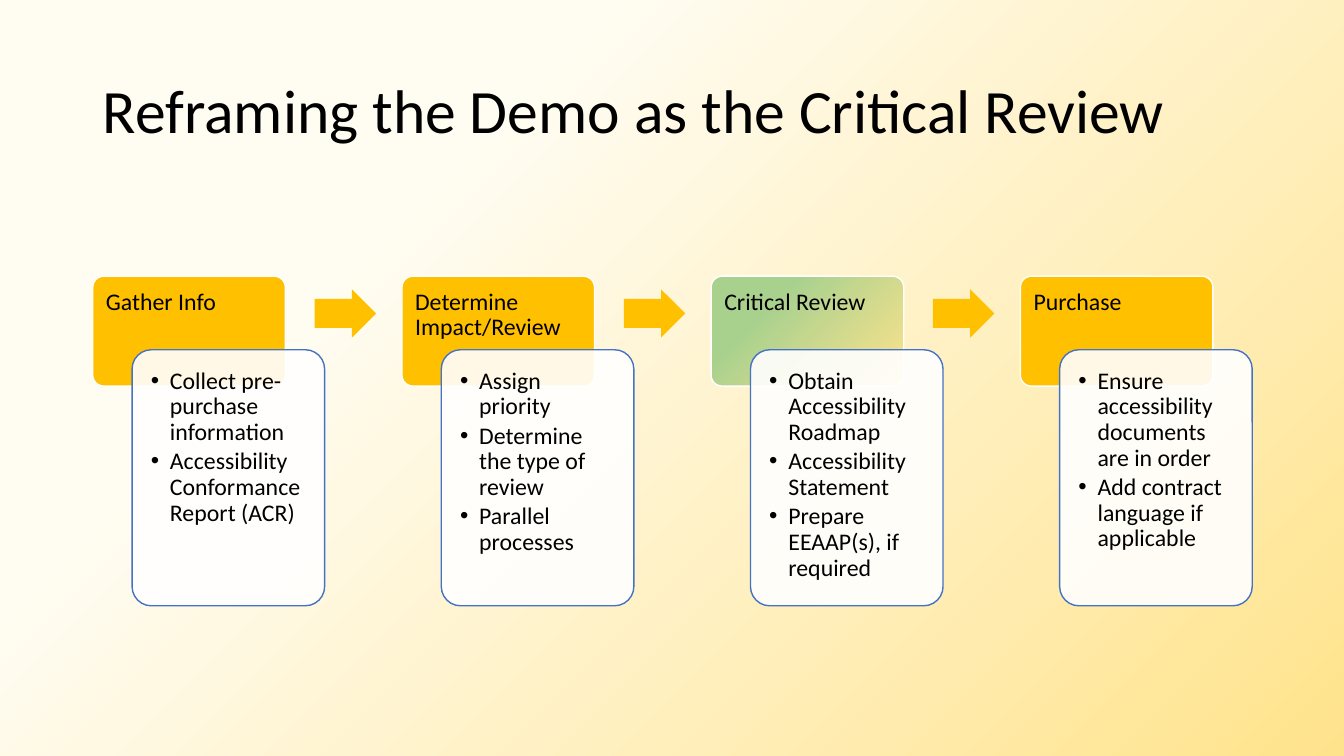
from lxml.etree import SubElement
from pptx import Presentation
from pptx.dml.color import RGBColor
from pptx.enum.shapes import MSO_SHAPE
from pptx.enum.text import MSO_ANCHOR, PP_ALIGN
from pptx.oxml.ns import qn
from pptx.util import Inches, Pt

BLACK = RGBColor(0x00, 0x00, 0x00)
WHITE = RGBColor(0xFF, 0xFF, 0xFF)
GOLD = RGBColor(0xFF, 0xC0, 0x00)
BLUE = RGBColor(0x44, 0x72, 0xC4)
GREEN = RGBColor(0xA9, 0xD1, 0x8E)
CREAM = RGBColor(0xFF, 0xFC, 0xF2)
SAND = RGBColor(0xFF, 0xE3, 0x8C)

TITLE = "Reframing the Demo as the Critical Review"
STEPS = [
    ("Gather Info", GOLD,
     ["Collect pre-purchase information",
      "Accessibility Conformance Report (ACR)"]),
    ("Determine Impact/Review", GOLD,
     ["Assign priority", "Determine the type of review", "Parallel processes"]),
    ("Critical Review", GREEN,
     ["Obtain Accessibility Roadmap", "Accessibility Statement",
      "Prepare EEAAP(s), if required"]),
    ("Purchase", GOLD,
     ["Ensure accessibility documents are in order",
      "Add contract language if applicable"]),
]
LEFT = 0.92
PITCH = 9.2 / 3


def apply(target, formats):
    for name, value in formats.items():
        setattr(target, name, value)


class ProcessSlide:
    """Holds the text style and current slide, and draws the process elements."""

    FONT = {"name": "Calibri", "size": Pt(17)}
    FRAME = {"word_wrap": True, "vertical_anchor": MSO_ANCHOR.TOP}
    PARAGRAPH = {"alignment": PP_ALIGN.LEFT, "line_spacing": 0.9}

    def __init__(self, prs):
        self.s = prs.slides.add_slide(prs.slide_layouts[5])
        self.gradient(self.s.background.fill, CREAM)
        self.group = None

    def gradient(self, fill, start):
        fill.gradient()
        fill.gradient_angle = 315
        for stop, color, position in zip(fill.gradient_stops, (start, SAND), (0.29, 1)):
            stop.color.rgb = color
            stop.position = position

    def text(self, p, content, **font):
        apply(p, self.PARAGRAPH)
        r = p.add_run()
        r.text = content
        apply(r.font, {**self.FONT, **font})
        r.font.color.rgb = BLACK

    def title(self, content):
        sp = self.s.shapes.title
        apply(sp, {"left": Inches(0.92), "top": Inches(0.4),
                   "width": Inches(11.5), "height": Inches(1.45)})
        sp.text_frame.vertical_anchor = MSO_ANCHOR.MIDDLE
        self.text(sp.text_frame.paragraphs[0], content, size=Pt(44))

    def start_process(self):
        self.group = self.s.shapes.add_group_shape()

    def shape(self, kind, box, fill, line, adjustments):
        sp = self.group.shapes.add_shape(kind, *map(Inches, box))
        sp.shadow.inherit = False
        for i, value in enumerate(adjustments):
            sp.adjustments[i] = value
        if fill == GREEN:
            self.gradient(sp.fill, fill)
        else:
            sp.fill.solid()
            sp.fill.fore_color.rgb = fill
        if line is None:
            sp.line.fill.background()
        else:
            sp.line.color.rgb = line
            sp.line.width = Pt(1)
        return sp

    def box(self, box, fill, line, margin):
        sp = self.shape(MSO_SHAPE.ROUNDED_RECTANGLE, box, fill, line, [0.1])
        sides = ("left", "top", "right", "bottom")
        margins = {f"margin_{side}": Inches(margin) for side in sides}
        apply(sp.text_frame, {**self.FRAME, **margins})
        return sp

    def header(self, x, content, fill):
        sp = self.box((x, 2.74, 1.91, 1.09), fill, WHITE, 0.1)
        p = sp.text_frame.paragraphs[0]
        self.text(p, content)
        p.space_after = Pt(6)

    def card(self, x, items):
        sp = self.box((x, 3.47, 1.91, 2.54), WHITE, BLUE, 0.13)
        color = sp._element.spPr.find(qn("a:solidFill")).find(qn("a:srgbClr"))
        SubElement(color, qn("a:alpha"), val="90000")
        tf = sp.text_frame
        for i, item in enumerate(items):
            p = tf.add_paragraph() if i else tf.paragraphs[0]
            self.text(p, item)
            apply(p, {"level": 1, "space_after": Pt(2.55)})
            self.bullet(p)

    def bullet(self, p):
        pPr = p._p.get_or_add_pPr()
        pPr.set("marL", str(Inches(0.19)))
        pPr.set("indent", str(Inches(-0.19)))
        SubElement(pPr, qn("a:buFont"), typeface="Arial")
        SubElement(pPr, qn("a:buChar"), char="•")

    def arrow(self, x):
        self.shape(MSO_SHAPE.RIGHT_ARROW, (x, 2.87, 0.61, 0.48), GOLD, None, [0.6, 0.5])


def main():
    prs = Presentation()
    apply(prs, {"slide_width": Inches(13.33), "slide_height": Inches(7.5)})
    slide = ProcessSlide(prs)
    slide.title(TITLE)
    slide.start_process()
    for i, (name, fill, items) in enumerate(STEPS):
        x = LEFT + i * PITCH
        slide.header(x, name, fill)
        slide.card(x + 0.39, items)
        if i < len(STEPS) - 1:
            slide.arrow(x + 2.2)
    prs.save("out.pptx")


if __name__ == "__main__":
    main()
